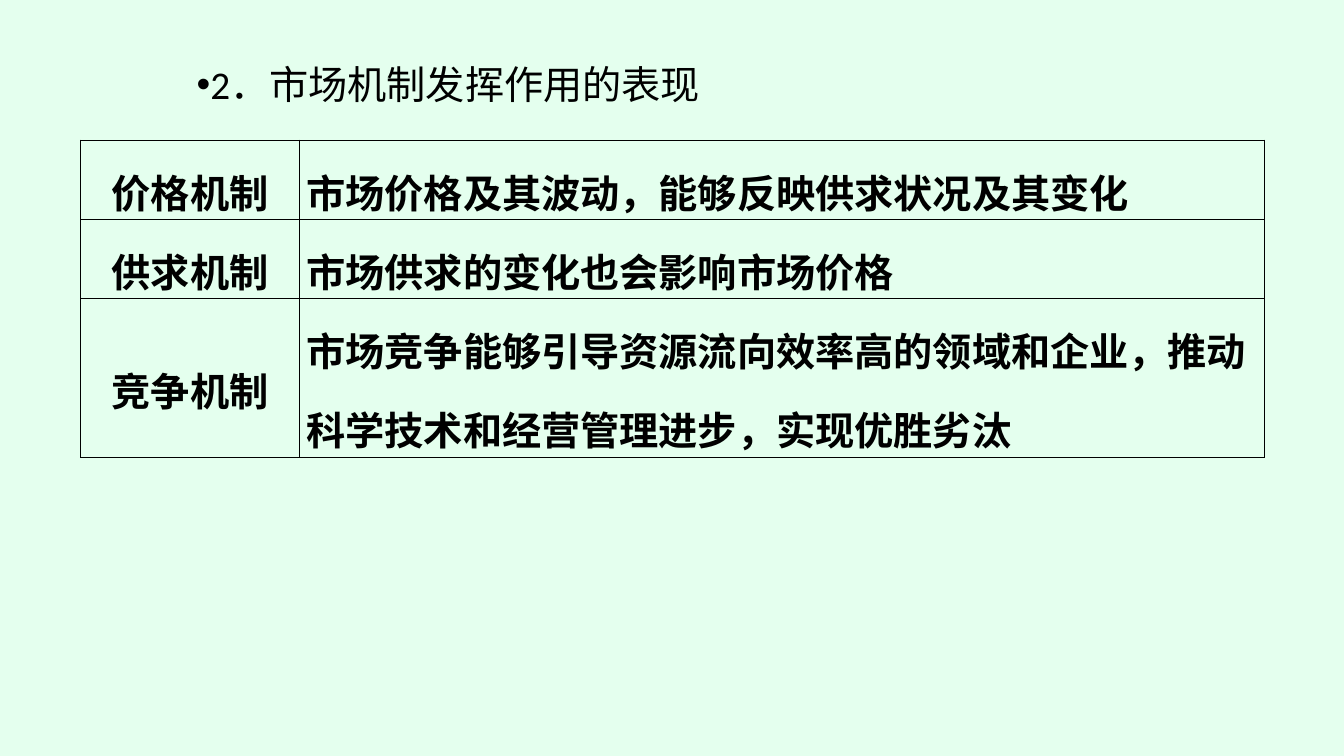
from lxml.etree import SubElement
from pptx import Presentation
from pptx.dml.color import RGBColor
from pptx.enum.text import MSO_ANCHOR as Anchor, MSO_AUTO_SIZE as AutoSize, PP_ALIGN as Align
from pptx.oxml import parse_xml
from pptx.oxml.ns import nsdecls, qn
from pptx.util import Inches, Pt

HEADING = "2．市场机制发挥作用的表现"
MECHANISMS = [
    ("价格机制", "市场价格及其波动，能够反映供求状况及其变化"),
    ("供求机制", "市场供求的变化也会影响市场价格"),
    ("竞争机制", "市场竞争能够引导资源流向效率高的领域和企业，"
                 "推动科学技术和经营管理进步，实现优胜劣汰"),
]


def color(hex_code):
    return RGBColor.from_string(hex_code)


class MechanismSlide:
    """Holds the slide and its style, and adds the heading and the table."""

    ink = "000000"
    paper = "E4FFEE"
    size = 28

    def __init__(self, deck):
        self.slide = deck.slides.add_slide(deck.slide_layouts[5])
        background = self.slide.background.fill
        background.solid()
        background.fore_color.rgb = color(self.paper)

    def style(self, paragraph, font_name, align, spacing, bold=False):
        paragraph.alignment = align
        paragraph.line_spacing = spacing
        for run in paragraph.runs:
            run.font.name = font_name
            run.font.size = Pt(self.size)
            run.font.bold = bold
            run.font.color.rgb = color(self.ink)

    def heading(self, text, left, top, width, height):
        title = self.slide.shapes.title
        title.left, title.top = Inches(left), Inches(top)
        title.width, title.height = Inches(width), Inches(height)
        frame = title.text_frame
        frame.text = text
        frame.word_wrap = True
        frame.auto_size = AutoSize.NONE
        frame.vertical_anchor = Anchor.TOP
        line = frame.paragraphs[0]
        self.style(line, "Calibri", Align.LEFT, 0.9)
        line.space_before = Pt(10)
        props = line._p.get_or_add_pPr()
        props.set("marL", str(Inches(0.25)))
        props.set("indent", str(Inches(0.72)))
        SubElement(props, qn("a:buFont"), typeface="Arial")
        SubElement(props, qn("a:buChar"), char="•")

    def borders(self, cell):
        props = cell._tc.get_or_add_tcPr()
        for position, side in enumerate(("lnL", "lnR", "lnT", "lnB")):
            props.insert(position, parse_xml(
                f'<a:{side} {nsdecls("a")} w="{Pt(1)}"><a:solidFill>'
                f'<a:srgbClr val="{self.ink}"/></a:solidFill></a:{side}>'))

    def cell(self, cell, text, align):
        cell.text_frame.text = text
        cell.vertical_anchor = Anchor.MIDDLE
        cell.margin_left = cell.margin_right = Inches(0.07)
        cell.margin_top = cell.margin_bottom = 0
        cell.fill.background()
        self.borders(cell)
        self.style(cell.text_frame.paragraphs[0], "Times New Roman", align, 1.4, bold=True)

    def table(self, entries, left, top, widths, heights):
        grid = self.slide.shapes.add_table(
            len(entries), len(widths), Inches(left), Inches(top),
            Inches(sum(widths)), Inches(sum(heights))).table
        grid.first_row = grid.horz_banding = False
        for column, width in zip(grid.columns, widths):
            column.width = Inches(width)
        for row, height, entry in zip(grid.rows, heights, entries):
            row.height = Inches(height)
            for cell, text, align in zip(row.cells, entry, (Align.CENTER, Align.LEFT)):
                self.cell(cell, text, align)


def main():
    deck = Presentation()
    deck.slide_width, deck.slide_height = Inches(13.33), Inches(7.5)
    page = MechanismSlide(deck)
    page.heading(HEADING, 0.88, 0.6, 12.45, 1.42)
    page.table(MECHANISMS, 0.8, 1.39, widths=(2.17, 9.57), heights=(0.65, 0.65, 1.31))
    deck.save("out.pptx")


if __name__ == "__main__":
    main()
